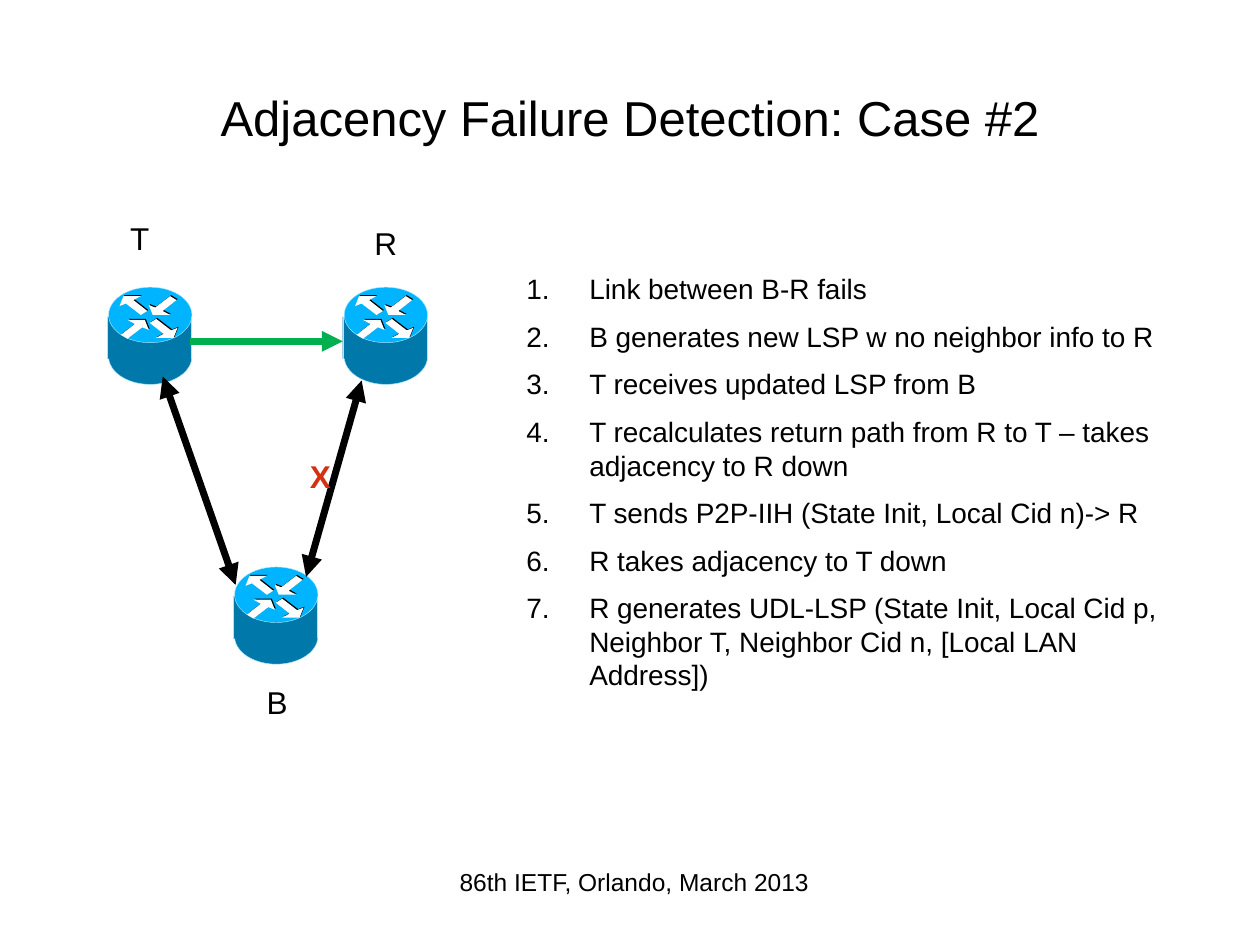
from lxml.etree import SubElement
from pptx import Presentation
from pptx.dml.color import RGBColor
from pptx.enum.shapes import MSO_CONNECTOR, MSO_SHAPE
from pptx.enum.text import MSO_ANCHOR, PP_ALIGN
from pptx.oxml.ns import qn
from pptx.util import Cm, Pt

COLORS = {
    "text": "000000", "link": "000000", "hello": "00B050", "fail": "D33111",
    "side": "0078AA", "top": "00B4FF", "edge": "AAE6FF",
    "shadow": "000000", "arrow": "FFFFFF",
}
STEPS = [
    "Link between B-R fails",
    "B generates new LSP w no neighbor info to R",
    "T receives updated LSP from B",
    "T recalculates return path from R to T – takes adjacency to R down",
    "T sends P2P-IIH (State Init, Local Cid n)-> R",
    "R takes adjacency to T down",
    "R generates UDL-LSP (State Init, Local Cid p, Neighbor T, "
    "Neighbor Cid n, [Local LAN Address])",
]
ARROW_W, ARROW_H = 0.56, 0.38
ARROW = [(0.56, 0.3), (0.43, 0.38), (0.13, 0.15), (0, 0.2),
         (0.08, 0), (0.43, 0), (0.28, 0.08)]
ARROW_SPOTS = [(0.25, 0.18, False, False), (0.86, 0.64, True, True),
               (0.84, 0.18, False, True), (0.28, 0.66, True, False)]


def rgb(name):
    """Return the named colour."""
    return RGBColor.from_string(COLORS[name])


def set_attrs(obj, values):
    """Set every attribute in a dict of format values."""
    for name, value in values.items():
        setattr(obj, name, value)


def write(tf, lines, size, color="text", align=PP_ALIGN.CENTER, bold=False):
    """Fill a text frame with formatted paragraphs."""
    for i, line in enumerate(lines):
        p = tf.paragraphs[0] if i == 0 else tf.add_paragraph()
        p.alignment = align
        if i:
            p.space_before = Pt(size / 2)
        r = p.add_run()
        r.text = line
        set_attrs(r.font, {"name": "Arial", "size": Pt(size), "bold": bold})
        r.font.color.rgb = rgb(color)


def add_text(shapes, box, lines, size, inset=(0.2, 0.1), **fmt):
    """Add a wrapping text box and return its text frame."""
    tf = shapes.add_textbox(*map(Cm, box)).text_frame
    dx, dy = map(Cm, inset)
    set_attrs(tf, {"word_wrap": True, "margin_left": dx, "margin_right": dx,
                   "margin_top": dy, "margin_bottom": dy})
    write(tf, lines, size, **fmt)
    return tf


def add_line(shapes, ends, color, width, heads=()):
    """Add a straight line with triangle heads at the named ends."""
    c = shapes.add_connector(MSO_CONNECTOR.STRAIGHT, *map(Cm, ends))
    c.line.color.rgb = rgb(color)
    c.line.width = Pt(width)
    spPr = c.element.spPr
    for head in heads:
        SubElement(spPr.find(qn("a:ln")), qn(f"a:{head}"), type="triangle")
    SubElement(spPr, qn("a:effectLst"))


def paint(sp, fill, edge=None):
    """Give a shape a flat fill and an optional thin edge."""
    sp.shadow.inherit = False
    sp.fill.solid()
    sp.fill.fore_color.rgb = rgb(fill)
    if edge:
        sp.line.color.rgb = rgb(edge)
        sp.line.width = Pt(0.25)
    else:
        sp.line.fill.background()


def add_arrow(shapes, x, y, flip_h, flip_v, color):
    """Draw one bent router arrow, mirrored as asked."""
    pts = [(Cm(x + (ARROW_W - px if flip_h else px)),
            Cm(y + (ARROW_H - py if flip_v else py))) for px, py in ARROW]
    fb = shapes.build_freeform(*pts[0], scale=1.0)
    fb.add_line_segments(pts[1:], close=True)
    paint(fb.convert_to_shape(), color)


def add_router(s, x, y):
    """Draw a router cylinder with its top left corner at x, y."""
    shapes = s.shapes.add_group_shape().shapes
    w, h = 1.7, 0.84
    for kind, dx, dy, pw, ph, fill, edge in [
        (MSO_SHAPE.OVAL, 0.03, 0.84, 1.68, 1.12, "side", "edge"),
        (MSO_SHAPE.RECTANGLE, 0, 0.6, w, h, "side", None),
        (MSO_SHAPE.OVAL, 0.03, 0, 1.68, 1.12, "top", "edge"),
    ]:
        paint(shapes.add_shape(kind, *map(Cm, (x + dx, y + dy, pw, ph))), fill, edge)
    for color, shift in (("shadow", 0.02), ("arrow", 0)):
        for dx, dy, flip_h, flip_v in ARROW_SPOTS:
            add_arrow(shapes, x + dx + shift, y + dy - shift, flip_h, flip_v, color)
    for side in (x + w, x):
        add_line(shapes, (side, y + 0.6, side, y + 0.6 + h), "edge", 0.25)


def add_network(s, x, y):
    """Draw the three routers, their names and their links."""
    for name, rx, ry, lx, ly, lw in [
        ("T", 0.36, 1.49, 0.03, 0.02, 1.98),
        ("R", 5.11, 1.49, 5.34, 0.12, 1.27),
        ("B", 2.9, 7.13, 2.8, 9.37, 1.98),
    ]:
        add_router(s, x + rx, y + ry)
        add_text(s.shapes, (x + lx, y + ly, lw, 1.98), [name], 18)
    both = ("headEnd", "tailEnd")
    for x1, y1, x2, y2, color, heads in [
        (4.37, 7.33, 5.49, 3.37, "link", both),
        (2.95, 7.49, 1.48, 3.29, "link", both),
        (2.04, 2.58, 5.11, 2.58, "hello", both[1:]),
    ]:
        add_line(s.shapes, (x + x1, y + y1, x + x2, y + y2), color, 4, heads)
    add_text(s.shapes, (x + 4.25, y + 4.82, 1.73, 0.97), ["X"], 18,
             color="fail", align=PP_ALIGN.LEFT, bold=True)


def add_steps(s, box):
    """Write the numbered steps of the failure case."""
    tf = add_text(s.shapes, box, STEPS, 16, align=PP_ALIGN.LEFT)
    for p in tf.paragraphs:
        pPr = p._p.get_or_add_pPr()
        pPr.set("marL", str(Cm(1.27)))
        pPr.set("indent", str(Cm(-1.27)))
        SubElement(pPr, qn("a:buFont"), typeface="+mj-lt")
        SubElement(pPr, qn("a:buAutoNum"), type="arabicPeriod")


def add_title(s, box, text):
    """Place and format the title placeholder."""
    sp = s.shapes.title
    set_attrs(sp, dict(zip(("left", "top", "width", "height"), map(Cm, box))))
    sp.text_frame.vertical_anchor = MSO_ANCHOR.MIDDLE
    write(sp.text_frame, [text], 28)


def main():
    """Build the slide and save it."""
    prs = Presentation()
    set_attrs(prs, {"slide_width": Cm(25.4), "slide_height": Cm(19.05)})
    s = prs.slides.add_slide(prs.slide_layouts[5])
    add_title(s, (1.27, 0.76, 22.86, 3.18), "Adjacency Failure Detection: Case #2")
    add_network(s, 1.8, 4.3)
    add_steps(s, (10.41, 5.38, 13.82, 9.04))
    add_text(s.shapes, (7.29, 17.35, 11, 1.32), ["86th IETF, Orlando, March 2013"],
             14, inset=(0.25, 0.13))
    prs.save("out.pptx")


if __name__ == "__main__":
    main()
